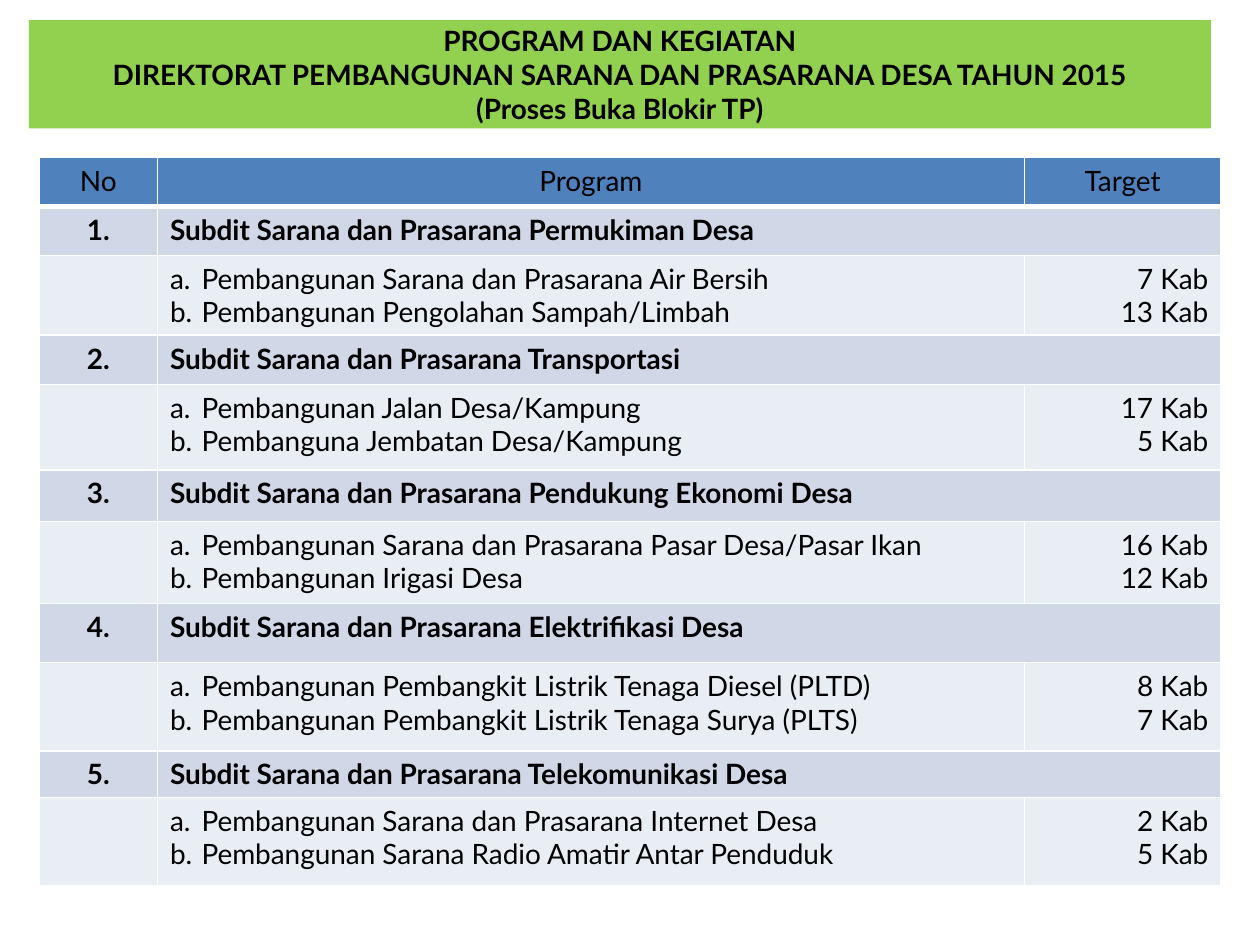
from dataclasses import dataclass

from lxml.etree import SubElement as Sub
from pptx import Presentation
from pptx.dml.color import RGBColor as RGB
from pptx.enum.shapes import MSO_SHAPE as Kind
from pptx.enum.text import MSO_ANCHOR as Anchor, PP_ALIGN as Align
from pptx.oxml.ns import qn
from pptx.util import Inches, Pt


@dataclass(frozen=True)
class Theme:
    font: str = "Lato"
    size: int = 16
    ink: str = "000000"
    title: str = "92D050"
    head: str = "4F81BD"
    group: str = "D0D8E8"
    item: str = "E9EDF4"
    line: str = "FFFFFF"


class Deck:
    def __init__(self, theme):
        self.theme = theme
        self.prs = Presentation()
        self.prs.slide_width, self.prs.slide_height = Inches(10), Inches(7.5)
        self.slide = self.prs.slides.add_slide(self.prs.slide_layouts[6])

    def text(self, frame, lines, align=Align.LEFT, bold=False, letters=False):
        for i, line in enumerate(lines):
            para = frame.paragraphs[0] if i == 0 else frame.add_paragraph()
            para.text = line
            para.alignment = align
            font = para.font
            font.name, font.size, font.bold = self.theme.font, Pt(self.theme.size), bold
            font.color.rgb = RGB.from_string(self.theme.ink)
            if letters:
                self.letter(para)

    def letter(self, para):
        """Letter a paragraph a., b., ... with a hanging indent."""
        props = para._p.get_or_add_pPr()
        props.set("marL", str(Inches(0.25)))
        props.set("indent", str(-Inches(0.25)))
        auto = Sub(props, qn("a:buAutoNum"), type="alphaLcPeriod")
        props.insert(0, auto)

    def banner(self, box, lines):
        shape = self.slide.shapes.add_shape(Kind.RECTANGLE, *map(Inches, box))
        shape.shadow.inherit = False
        shape.fill.solid()
        shape.fill.fore_color.rgb = RGB.from_string(self.theme.title)
        shape.line.fill.background()
        frame = shape.text_frame
        frame.word_wrap = False
        frame.vertical_anchor = Anchor.MIDDLE
        self.text(frame, lines, Align.CENTER, bold=True)

    def table(self, left, top, cols, rows):
        box = map(Inches, (left, top, sum(cols), sum(rows)))
        grid = self.slide.shapes.add_table(len(rows), len(cols), *box).table
        grid.first_row = grid.horz_banding = False
        for col, width in zip(grid.columns, cols):
            col.width = Inches(width)
        for row, height in zip(grid.rows, rows):
            row.height = Inches(height)
        return grid

    def row(self, grid, num, color, base=1):
        """Paint one row and return its cells."""
        cells = list(grid.rows[num].cells)
        for cell in cells:
            self.edge(cell, base)
            cell.fill.solid()
            cell.fill.fore_color.rgb = RGB.from_string(color)
        return cells

    def edge(self, cell, base):
        props = cell._tc.get_or_add_tcPr()
        for side, width in (("L", 1), ("R", 1), ("T", 1), ("B", base)):
            line = Sub(props, qn(f"a:ln{side}"), w=str(Pt(width)))
            fill = Sub(line, qn("a:solidFill"))
            Sub(fill, qn("a:srgbClr"), val=self.theme.line)


TITLE = (
    "PROGRAM DAN KEGIATAN",
    "DIREKTORAT PEMBANGUNAN SARANA DAN PRASARANA DESA TAHUN 2015",
    "(Proses Buka Blokir TP)",
)
HEADS = ("No", "Program", "Target")
COLS = (0.94, 6.88, 1.56)
ROWS = (0.39, 0.39, 0.63, 0.39, 0.68, 0.41, 0.65, 0.47, 0.7, 0.37, 0.7)

# Group name, then its programs with their targets
GROUPS = (
    ("Permukiman Desa", {
        "Pembangunan Sarana dan Prasarana Air Bersih": 7,
        "Pembangunan Pengolahan Sampah/Limbah": 13}),
    ("Transportasi", {
        "Pembangunan Jalan Desa/Kampung": 17,
        "Pembanguna Jembatan Desa/Kampung": 5}),
    ("Pendukung Ekonomi Desa", {
        "Pembangunan Sarana dan Prasarana Pasar Desa/Pasar Ikan": 16,
        "Pembangunan Irigasi Desa": 12}),
    ("Elektrifikasi Desa", {
        "Pembangunan Pembangkit Listrik Tenaga Diesel (PLTD)": 8,
        "Pembangunan Pembangkit Listrik Tenaga Surya (PLTS)": 7}),
    ("Telekomunikasi Desa", {
        "Pembangunan Sarana dan Prasarana Internet Desa": 2,
        "Pembangunan Sarana Radio Amatir Antar Penduduk": 5}),
)


def main():
    theme = Theme()
    deck = Deck(theme)

    # Title banner
    deck.banner((0.23, 0.16, 9.38, 0.86), TITLE)

    # Table head
    grid = deck.table(0.31, 1.25, COLS, ROWS)
    for cell, head in zip(deck.row(grid, 0, theme.head, base=3), HEADS):
        deck.text(cell.text_frame, [head], Align.CENTER)

    # One group row and one item row per section
    for num, (name, items) in enumerate(GROUPS, 1):
        count, label, last = deck.row(grid, 2 * num - 1, theme.group)
        label.merge(last)
        deck.text(count.text_frame, [f"{num}."], Align.CENTER, bold=True)
        deck.text(label.text_frame, [f"Subdit Sarana dan Prasarana {name}"], bold=True)

        _, work, goal = deck.row(grid, 2 * num, theme.item)
        deck.text(work.text_frame, items, letters=True)
        deck.text(goal.text_frame, [f"{n} Kab" for n in items.values()], Align.RIGHT)

    deck.prs.save("out.pptx")


if __name__ == "__main__":
    main()
